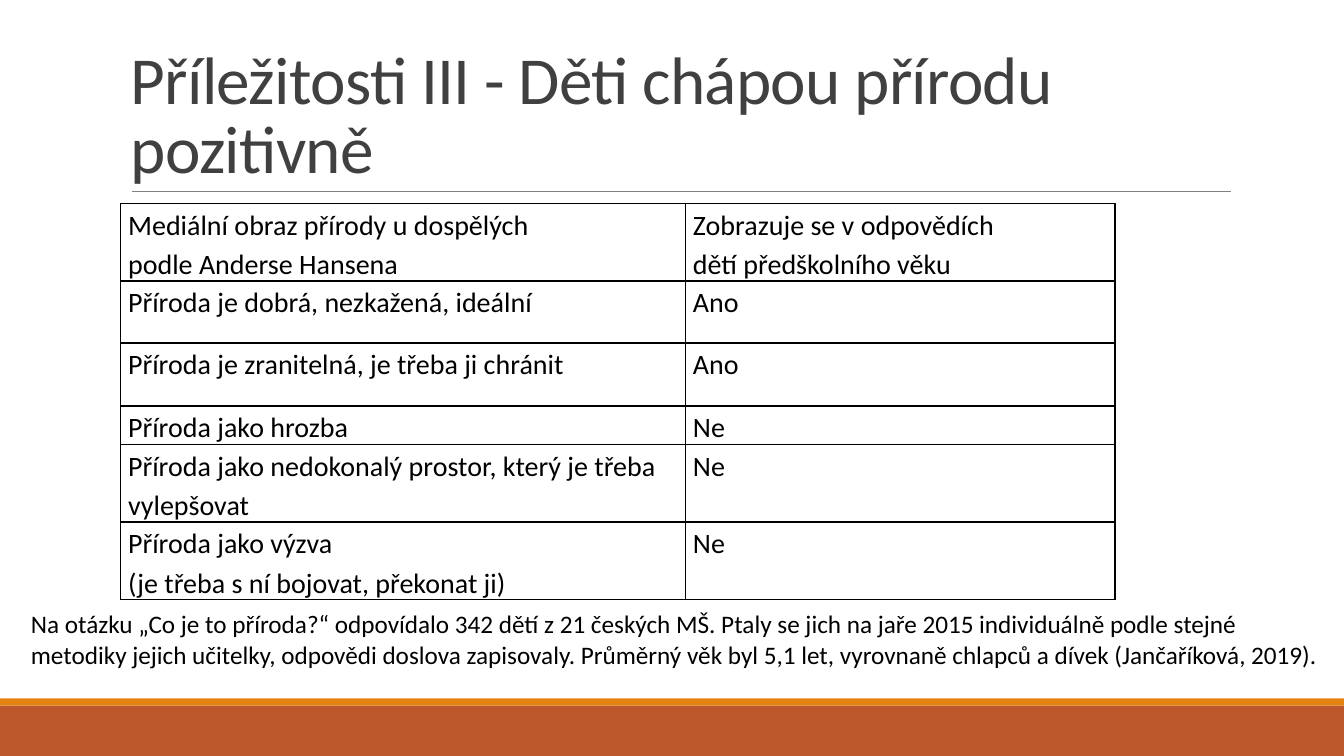
from dataclasses import dataclass

from lxml.etree import SubElement
from pptx import Presentation
from pptx.dml.color import RGBColor
from pptx.enum.shapes import MSO_CONNECTOR as Connector, MSO_SHAPE as Shape
from pptx.enum.text import MSO_ANCHOR as Anchor
from pptx.oxml import parse_xml
from pptx.oxml.ns import nsdecls, qn
from pptx.util import Emu, Pt

EMU_PER_PX = 9525
SLIDE_SIZE = (1280, 720)


@dataclass(frozen=True)
class Theme:
    font: str = "Calibri"
    title_color: str = "404040"
    text_color: str = "000000"
    rule_color: str = "808080"
    footer_color: str = "BD582C"
    stripe_color: str = "E48312"
    title_size: int = 48
    table_size: int = 20
    note_size: int = 18


THEME = Theme()

TITLE = "Příležitosti III - Děti chápou přírodu pozitivně"
# Within a cell, \v breaks a line and \n starts a paragraph.
ANSWERS = [
    ("Mediální obraz přírody u dospělých \vpodle Anderse Hansena",
     "Zobrazuje se v odpovědích\ndětí předškolního věku"),
    ("Příroda je dobrá, nezkažená, ideální", "Ano"),
    ("Příroda je zranitelná, je třeba ji chránit", "Ano"),
    ("Příroda jako hrozba", "Ne"),
    ("Příroda jako nedokonalý prostor, který je třeba vylepšovat", "Ne"),
    ("Příroda jako výzva \v(je třeba s ní bojovat, překonat ji)", "Ne"),
]
COLUMN_WIDTHS = (538, 409)
ROW_HEIGHTS = (65, 59, 60, 33, 59, 60)
NOTE = (
    "Na otázku „Co je to příroda?“ odpovídalo 342 dětí z 21 českých MŠ. "
    "Ptaly se jich na jaře 2015 individuálně podle stejné metodiky jejich "
    "učitelky, odpovědi doslova zapisovaly. Průměrný věk byl 5,1 let, "
    "vyrovnaně chlapců a dívek (Jančaříková, 2019)."
)


def px(length):
    return Emu(length * EMU_PER_PX)


def rgb(color):
    return RGBColor.from_string(color)


def format_text(text_frame, size, color, line_spacing=1.0, tracking=None):
    """Style every run; tracking is in hundredths of a point."""
    for paragraph in text_frame.paragraphs:
        paragraph.line_spacing = line_spacing
        for run in paragraph.runs:
            run.font.name = THEME.font
            run.font.size = Pt(size)
            run.font.color.rgb = rgb(color)
            if tracking is not None:
                run._r.get_or_add_rPr().set("spc", str(tracking))


def add_bar(slide, top, height, color):
    shape = slide.shapes.add_shape(
        Shape.RECTANGLE, 0, px(top), px(SLIDE_SIZE[0]), px(height))
    shape.shadow.inherit = False
    shape.fill.solid()
    shape.fill.fore_color.rgb = rgb(color)
    shape.line.fill.background()


def add_rule(slide, left, right, y):
    connector = slide.shapes.add_connector(
        Connector.STRAIGHT, px(left), px(y), px(right), px(y))
    connector.line.color.rgb = rgb(THEME.rule_color)
    connector.line.width = Pt(0.5)
    SubElement(connector._element.spPr, qn("a:effectLst"))


def add_text(slide, box, text, size, color, anchor=Anchor.TOP, **spacing):
    shape = slide.shapes.add_textbox(*map(px, box))
    text_frame = shape.text_frame
    text_frame.word_wrap = True
    text_frame.vertical_anchor = anchor
    text_frame.text = text
    format_text(text_frame, size, color, **spacing)


def set_borders(cell):
    properties = cell._tc.get_or_add_tcPr()
    for index, side in enumerate(("lnL", "lnR", "lnT", "lnB")):
        properties.insert(index, parse_xml(
            f'<a:{side} {nsdecls("a")} w="{Pt(1)}"><a:solidFill>'
            f'<a:srgbClr val="{THEME.text_color}"/>'
            f'</a:solidFill></a:{side}>'))


def fill_cell(cell, text):
    cell.margin_left = cell.margin_right = px(7)
    cell.margin_top = cell.margin_bottom = 0
    cell.text_frame.text = text
    format_text(cell.text_frame, THEME.table_size, THEME.text_color, 1.15)
    cell.fill.background()
    set_borders(cell)


def add_answer_table(slide, left, top):
    table = slide.shapes.add_table(
        len(ANSWERS), len(COLUMN_WIDTHS), px(left), px(top),
        px(sum(COLUMN_WIDTHS)), px(sum(ROW_HEIGHTS))).table
    table.first_row = table.horz_banding = False
    for column, width in zip(table.columns, COLUMN_WIDTHS):
        column.width = px(width)
    for row, height, texts in zip(table.rows, ROW_HEIGHTS, ANSWERS):
        row.height = px(height)
        for cell, text in zip(row.cells, texts):
            fill_cell(cell, text)


def main():
    presentation = Presentation()
    presentation.slide_width, presentation.slide_height = map(px, SLIDE_SIZE)
    slide = presentation.slides.add_slide(presentation.slide_layouts[6])

    add_bar(slide, 672, 48, THEME.footer_color)
    add_bar(slide, 665, 7, THEME.stripe_color)
    add_rule(slide, 126, 1172, 182)
    add_text(slide, (115, 30, 1056, 153), TITLE, THEME.title_size,
             THEME.title_color, Anchor.BOTTOM, line_spacing=0.85, tracking=-50)
    add_answer_table(slide, 115, 194)
    add_text(slide, (20, 575, 1260, 68), NOTE, THEME.note_size,
             THEME.text_color)

    presentation.save("out.pptx")


if __name__ == "__main__":
    main()
